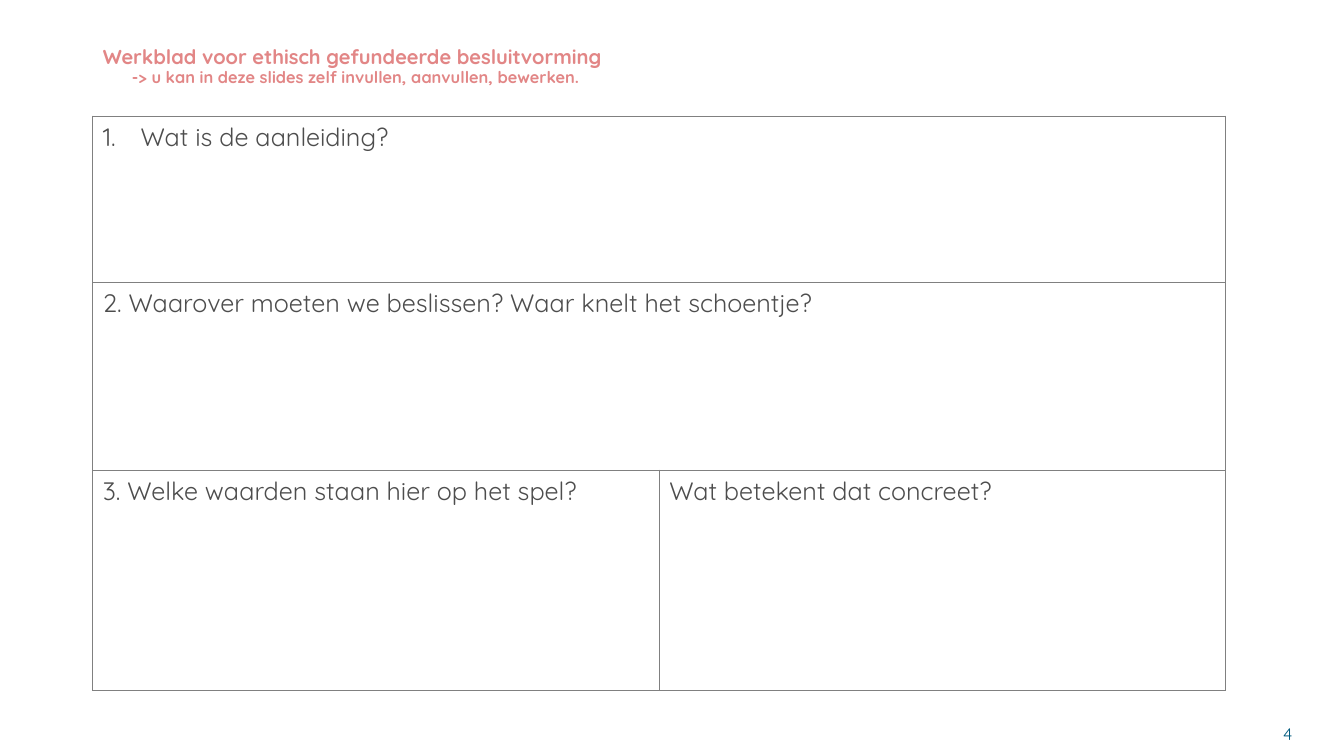
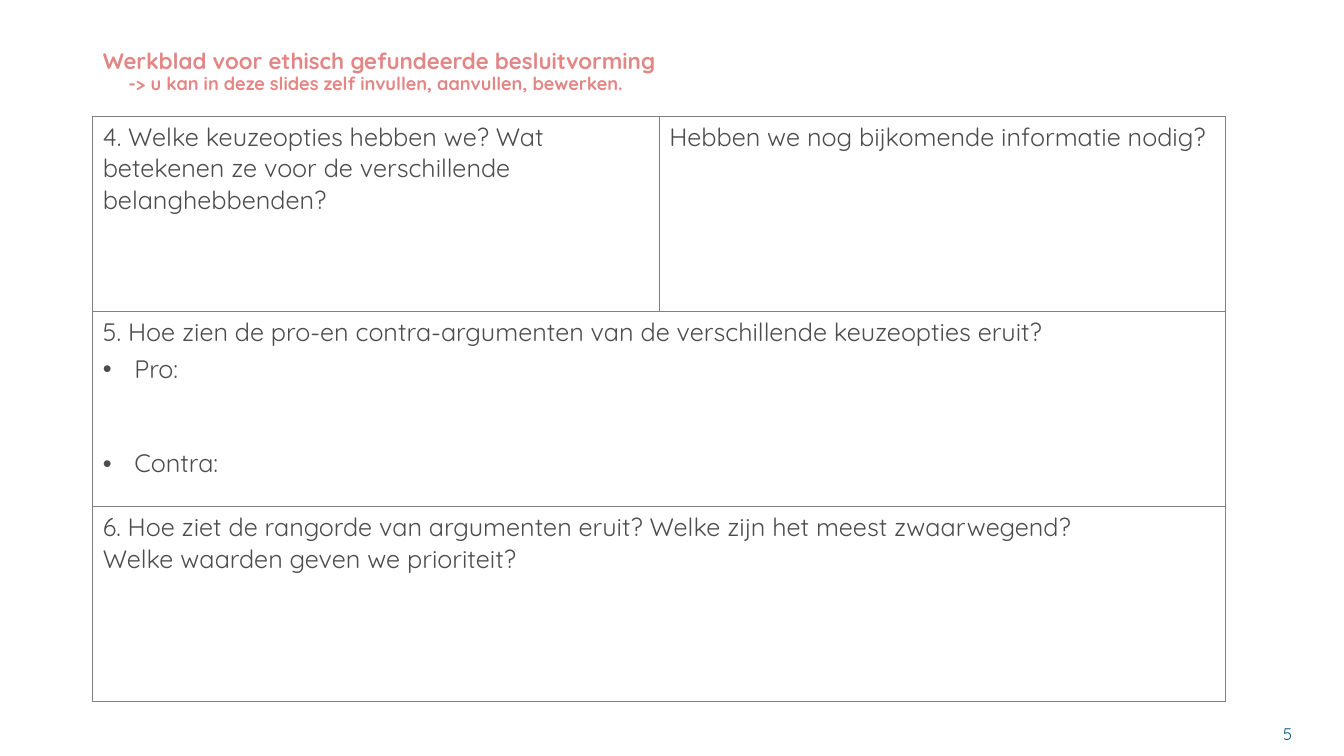
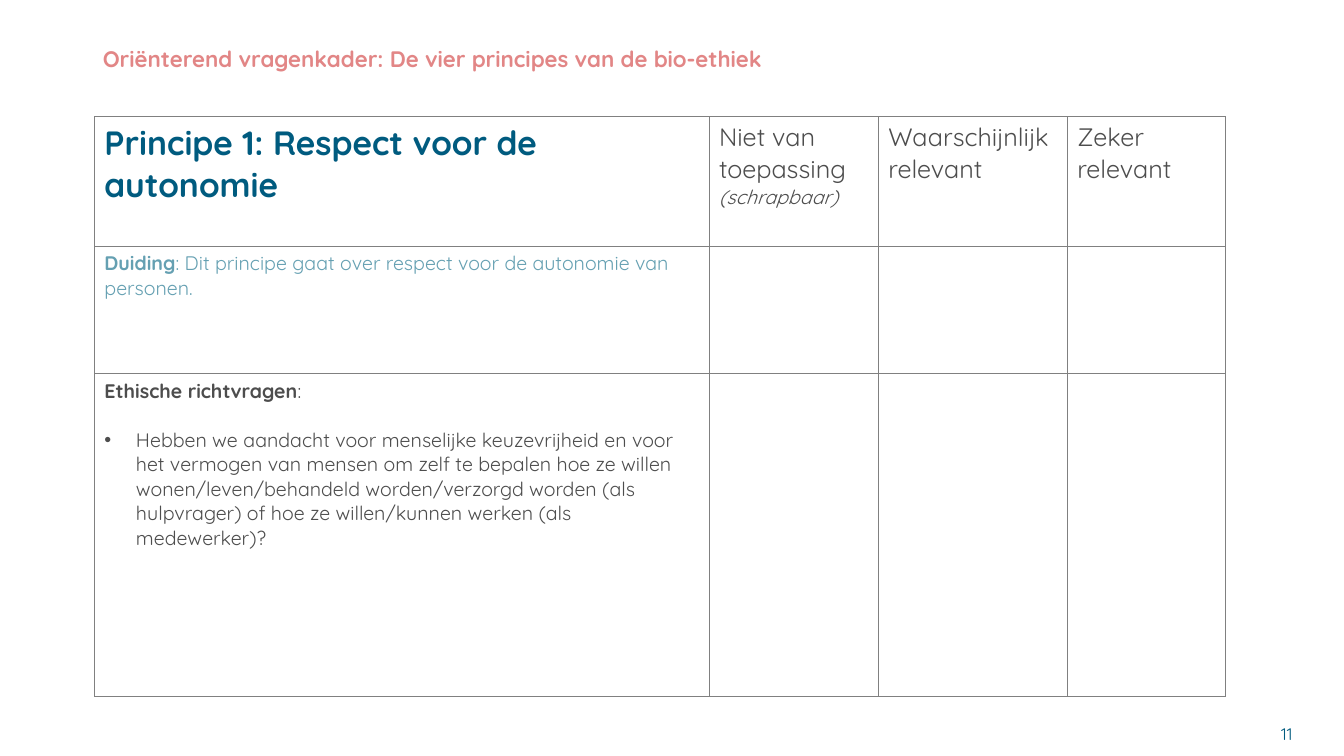
from lxml import etree
from pptx import Presentation
from pptx.dml.color import RGBColor
from pptx.enum import text as tx
from pptx.oxml import ns
from pptx.util import Pt

PINK = RGBColor(0xE2, 0x86, 0x86)
NAVY = RGBColor(0x00, 0x5B, 0x7F)
TEAL = RGBColor(0x65, 0xA0, 0xB2)
GREY = RGBColor(0x4D, 0x4D, 0x4D)
LINE = RGBColor(0x80, 0x80, 0x80)
FACE = "Quicksand"
LEFT, WIDE = 66.24, 809.28

BODY = {"size": Pt(18)}
SMALL = {"size": Pt(14)}
BOLD = {**SMALL, "bold": True}
NOTE = {**SMALL, "italic": True}
HEAD = {"size": Pt(24), "bold": True}

SHEET = "Werkblad voor ethisch gefundeerde besluitvorming"
HINT = "-> u kan in deze slides zelf invullen, aanvullen, bewerken."


def sub(node, tag, **attrs):
    return etree.SubElement(node, ns.qn(tag), attrs)


def para(*runs, **opts):
    return runs, opts


def ask(words, **opts):
    return para((words, BODY, GREY), **opts)


class Deck:
    def __init__(self):
        self.prs = Presentation()
        self.prs.slide_width, self.prs.slide_height = Pt(960), Pt(540)
        self.slide = None

    def fill(self, frame, paras):
        for i, (runs, opts) in enumerate(paras):
            p = frame.paragraphs[0] if i == 0 else frame.add_paragraph()
            form = {"alignment": tx.PP_ALIGN.LEFT, "space_before": Pt(0)}
            form.update({k: v for k, v in opts.items() if k not in ("mark", "left")})
            for key, val in form.items():
                setattr(p, key, val)
            props = p._p.get_or_add_pPr()
            if "left" in opts:
                props.set("marL", str(Pt(opts["left"])))
            if "mark" in opts:
                props.set("indent", str(-Pt(opts["left"])))
                if opts["mark"] == "1.":
                    sub(props, "a:buAutoNum", type="arabicPeriod")
                else:
                    sub(props, "a:buFont", typeface="Arial")
                    sub(props, "a:buChar", char=opts["mark"])
            for words, style, ink in runs:
                run = p.add_run()
                run.text = words
                for key, val in {"name": FACE, "bold": False, **style}.items():
                    setattr(run.font, key, val)
                run.font.color.rgb = ink

    def page(self, num):
        self.slide = self.prs.slides.add_slide(self.prs.slide_layouts[5])
        box = self.slide.shapes.add_textbox(Pt(714.24), Pt(509.76), Pt(216), Pt(28.8))
        box.text_frame.word_wrap = True
        box.text_frame.vertical_anchor = tx.MSO_ANCHOR.MIDDLE
        self.fill(box.text_frame, [para((str(num), {"size": Pt(12)}, NAVY),
                                        alignment=tx.PP_ALIGN.RIGHT)])

    def title(self, words, high, size=16, hint=None, left=0):
        box = self.slide.shapes.title
        place = {"left": LEFT, "top": 28.8, "width": WIDE, "height": high}
        for key, val in place.items():
            setattr(box, key, Pt(val))
        frame = box.text_frame
        form = {"auto_size": tx.MSO_AUTO_SIZE.NONE, "word_wrap": True,
                "vertical_anchor": tx.MSO_ANCHOR.MIDDLE}
        for key, val in form.items():
            setattr(frame, key, val)
        rows = [para((words, {"size": Pt(size), "bold": True}, PINK), line_spacing=0.9)]
        if hint:
            style = {"size": Pt(round(size * 0.8125, 1)), "bold": True}
            rows.append(para((hint, style, PINK), line_spacing=0.9, left=left))
        self.fill(frame, rows)

    def edge(self, cell):
        cell.fill.background()
        props = cell._tc.get_or_add_tcPr()
        for i, side in enumerate(("lnL", "lnR", "lnT", "lnB")):
            ln = sub(props, "a:" + side, w=str(Pt(0.5)))
            sub(sub(ln, "a:solidFill"), "a:srgbClr", val=str(LINE))
            props.insert(i, ln)

    def table(self, cols, rows, cells, left=LEFT, top=82.8):
        grid = self.slide.shapes.add_table(
            len(rows), len(cols), Pt(left), Pt(top), Pt(sum(cols)), Pt(sum(rows))).table
        grid.first_row = grid.horz_banding = False
        for col, size in zip(grid.columns, cols):
            col.width = Pt(size)
        for row, size in zip(grid.rows, rows):
            row.height = Pt(size)
        for cell in grid.iter_cells():
            self.edge(cell)
        for r, line in enumerate(cells):
            if len(line) == 1 and len(cols) == 2:
                grid.cell(r, 0).merge(grid.cell(r, 1))
            for c, paras in enumerate(line):
                self.fill(grid.cell(r, c).text_frame, paras)


def main():
    deck = Deck()
    half = [WIDE / 2] * 2

    deck.page(4)
    deck.title(SHEET, 38.16, 14.4, HINT, 20.7)
    deck.table(half, [118.8, 134, 157.7], [
        [[ask("Wat is de aanleiding?", mark="1.", left=27)]],
        [[ask("2. Waarover moeten we beslissen? Waar knelt het schoentje?")]],
        [[ask("3. Welke waarden staan hier op het spel?")],
         [ask("Wat betekent dat concreet?")]],
    ])

    deck.page(5)
    deck.title(SHEET, 46.08, 16, HINT, 18.5)
    deck.table(half, [139.5] * 3, [
        [[ask("4. Welke keuzeopties hebben we? Wat betekenen ze voor de "
              "verschillende belanghebbenden?")],
         [ask("Hebben we nog bijkomende informatie nodig?")]],
        [[ask("5. Hoe zien de pro-en contra-argumenten van de verschillende "
              "keuzeopties eruit?"),
          ask("Pro:", mark="•", left=22.5, space_before=Pt(3.75)),
          ask("Contra:", mark="•", left=22.5, space_before=Pt(45))]],
        [[ask("6. Hoe ziet de rangorde van argumenten eruit? Welke zijn het "
              "meest zwaarwegend?"),
          ask("Welke waarden geven we prioriteit?")]],
    ])

    deck.page(11)
    deck.title("Oriënterend vragenkader: De vier principes van de bio-ethiek", 28.8)
    deck.table([439, 121, 135, 113], [92.5, 91, 230.5], [
        [[para(("Principe 1: Respect voor de autonomie", HEAD, NAVY))],
         [ask("Niet van toepassing"), para(("(schrapbaar)", NOTE, GREY))],
         [ask("Waarschijnlijk relevant")],
         [ask("Zeker relevant")]],
        [[para(("Duiding", BOLD, TEAL),
               (": Dit principe gaat over respect voor de autonomie van personen.",
                SMALL, TEAL))]],
        [[para(("Ethische richtvragen", BOLD, GREY), (":", SMALL, GREY)),
          para(("Hebben we aandacht voor menselijke keuzevrijheid en voor het "
                "vermogen van mensen om zelf te bepalen hoe ze willen "
                "wonen/leven/behandeld worden/verzorgd worden (als hulpvrager) "
                "of hoe ze willen/kunnen werken (als medewerker)?", SMALL, GREY),
               mark="•", left=22.5, space_before=Pt(17.5))]],
    ], left=67.4, top=83.2)

    deck.prs.save("out.pptx")


if __name__ == "__main__":
    main()
